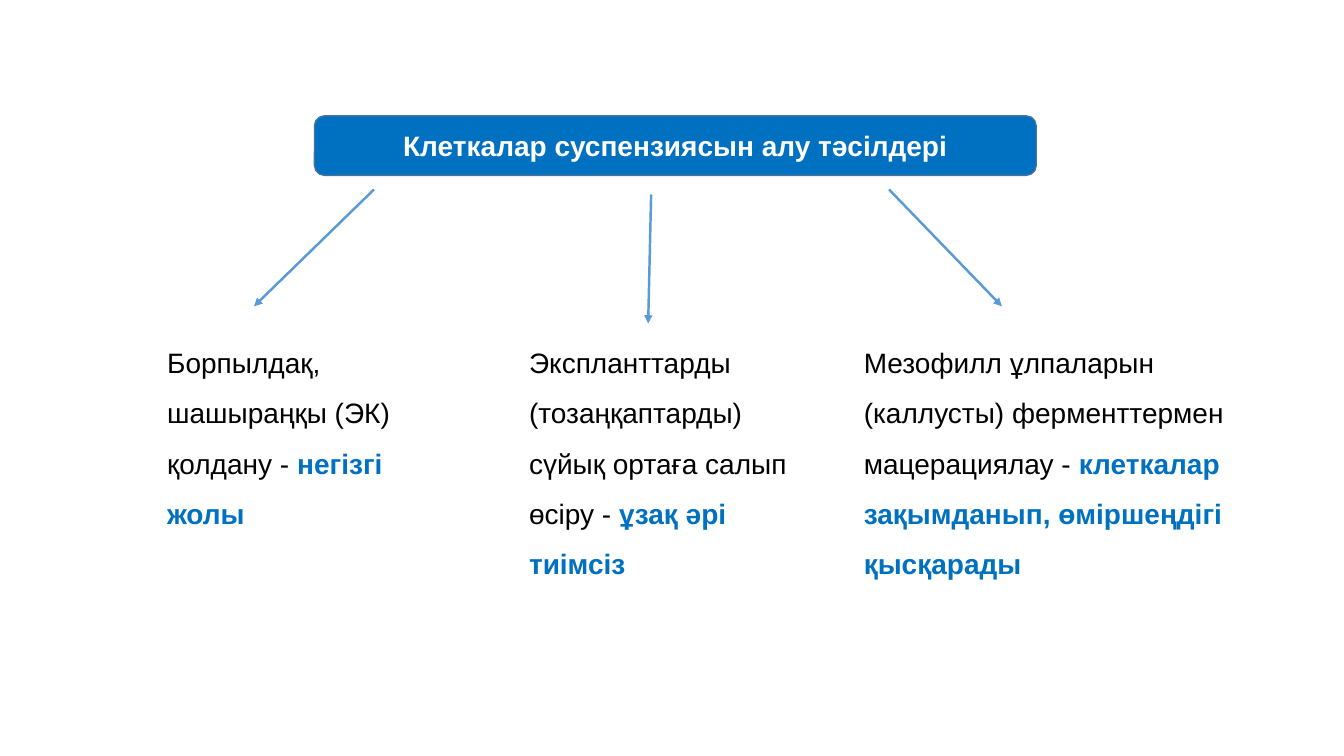
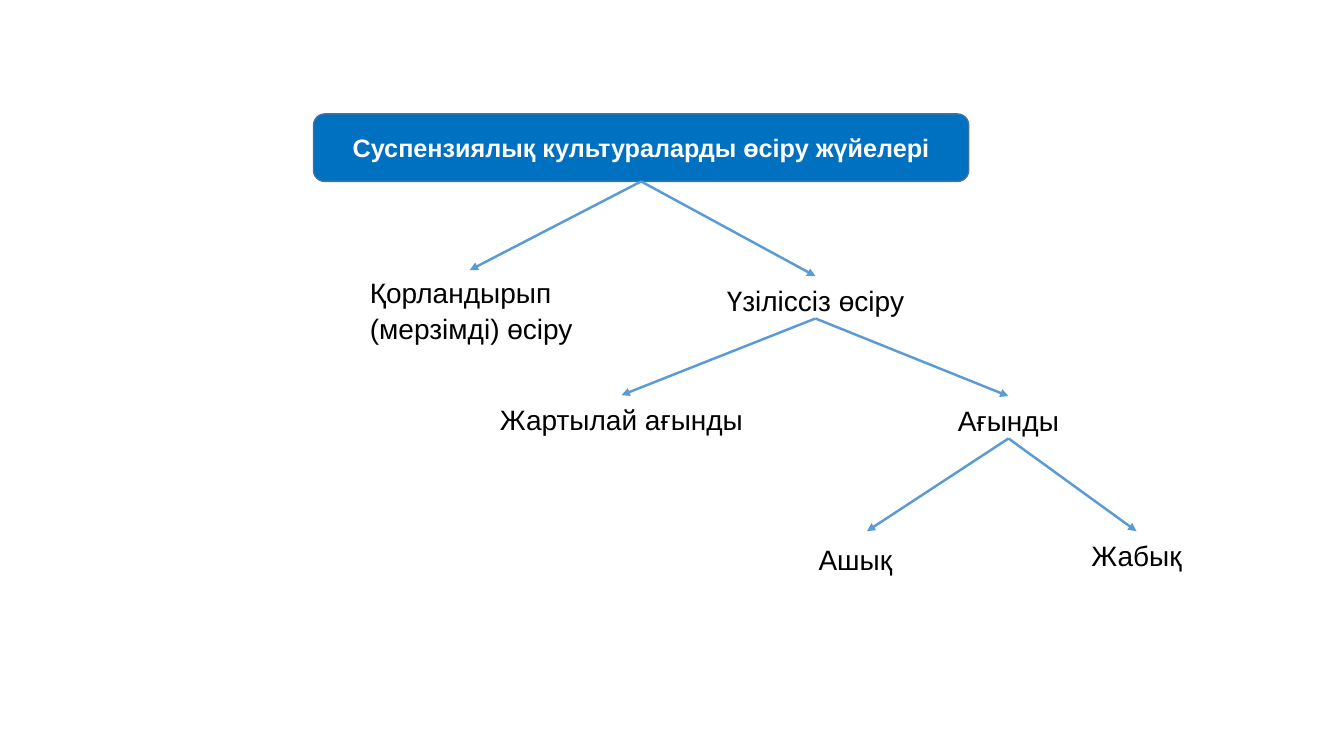
from dataclasses import dataclass
from typing import NamedTuple, Optional

from lxml.etree import SubElement
from pptx import Presentation
from pptx.dml.color import RGBColor
from pptx.enum.shapes import MSO_CONNECTOR, MSO_SHAPE
from pptx.enum.text import MSO_ANCHOR, PP_ALIGN
from pptx.oxml.ns import qn
from pptx.shapes.autoshape import Shape
from pptx.shapes.connector import Connector
from pptx.slide import Slide
from pptx.text.text import TextFrame
from pptx.util import Inches, Pt

WIDTH, HEIGHT = Inches(13.333), Inches(7.5)
FONT = "Arial"
BLUE, HEADER_EDGE, ARROW = "0070C0", "43739E", "5B9BD5"
BLACK, WHITE = "000000", "FFFFFF"
BOTTOM, TOP = 2, 0
NODE_HEIGHT = 5.6


class Point(NamedTuple):
    """A place in percent of the slide's width and height."""
    x: float
    y: float


class Area(NamedTuple):
    """A rectangle in percent of the slide's width and height."""
    left: float
    top: float
    width: float
    height: float


@dataclass(frozen=True)
class Method:
    """A way of obtaining a suspension, with its verdict."""
    area: Area
    description: str
    verdict: str


@dataclass(frozen=True)
class Node:
    """A label in the tree; a tip replaces the joint with its top side."""
    name: str
    parent: str
    area: Area
    lines: tuple[str, ...]
    align: PP_ALIGN = PP_ALIGN.CENTER
    tip: Optional[Point] = None


METHODS = (
    Method(Area(11.7, 42.8, 22.05, 34.13),
           "Борпылдақ, шашыраңқы (ЭК) қолдану - ", "негізгі жолы"),
    Method(Area(38.63, 42.8, 23.25, 34.13),
           "Экспланттарды (тозаңқаптарды) сүйық ортаға салып өсіру - ",
           "ұзақ әрі тиімсіз"),
    Method(Area(63.53, 42.8, 32.4, 39.47),
           "Мезофилл ұлпаларын (каллусты) ферменттермен мацерациялау - ",
           "клеткалар зақымданып, өміршеңдігі қысқарады"),
)
METHOD_ARROWS = (
    (Point(27.83, 25.07), Point(18.9, 40.53)),
    (Point(66.15, 25.07), Point(74.55, 40.53)),
    (Point(48.45, 25.73), Point(48.23, 42.8)),
)
NODES = (
    Node("batch", "header", Area(26.78, 35.47, 17.1, 10.93),
         ("Қорландырып", "(мерзімді) өсіру"), PP_ALIGN.LEFT, Point(34.95, 35.73)),
    Node("continuous", "header", Area(53.25, 36.53, 14.85, NODE_HEIGHT),
         ("Үзіліссіз өсіру",)),
    Node("semi-flow", "continuous", Area(36.38, 52.27, 19.73, NODE_HEIGHT),
         ("Жартылай ағынды",)),
    Node("flow", "continuous", Area(70.5, 52.4, 9.08, NODE_HEIGHT), ("Ағынды",)),
    Node("open", "flow", Area(59.85, 70.8, 7.58, NODE_HEIGHT), ("Ашық",),
         tip=Point(64.5, 70.27)),
    Node("closed", "flow", Area(80.4, 70.27, 8.33, NODE_HEIGHT), ("Жабық",)),
)


def color(code: str) -> RGBColor:
    """Turn a hex string into a colour."""
    return RGBColor.from_string(code)


def across(share: float) -> int:
    """Turn a percentage of the width into a length."""
    return round(WIDTH * share / 100)


def down(share: float) -> int:
    """Turn a percentage of the height into a length."""
    return round(HEIGHT * share / 100)


def place(area: Area) -> tuple[int, int, int, int]:
    """Turn an area into left, top, width and height."""
    return across(area.left), down(area.top), across(area.width), down(area.height)


def write(frame: TextFrame, lines: tuple[tuple[tuple[str, str, bool], ...], ...], *,
          size: float = 20, align: PP_ALIGN = PP_ALIGN.LEFT,
          spacing: float = 1.0, anchor: MSO_ANCHOR = MSO_ANCHOR.TOP,
          wrap: bool = True) -> None:
    """Fill a frame with lines of (text, colour, bold) spans."""
    frame.word_wrap = wrap
    frame.vertical_anchor = anchor
    for index, line in enumerate(lines):
        para = frame.add_paragraph() if index else frame.paragraphs[0]
        para.alignment = align
        para.line_spacing = spacing
        for text, code, bold in line:
            span = para.add_run()
            span.text = text
            span.font.name = FONT
            span.font.size = Pt(size)
            span.font.bold = bold
            span.font.color.rgb = color(code)


def add_box(page: Slide, kind: MSO_SHAPE, area: Area, *, edge: str,
            fill: Optional[str] = None) -> Shape:
    """Add an outlined box without a shadow."""
    box = page.shapes.add_shape(kind, *place(area))
    box.shadow.inherit = False
    box.line.color.rgb = color(edge)
    box.line.width = Pt(1)
    if fill:
        box.fill.solid()
        box.fill.fore_color.rgb = color(fill)
    else:
        box.fill.background()
    return box


def add_header(page: Slide, area: Area, text: str, *, size: float) -> Shape:
    """Add the rounded blue heading."""
    box = add_box(page, MSO_SHAPE.ROUNDED_RECTANGLE, area, edge=HEADER_EDGE, fill=BLUE)
    write(box.text_frame, (((text, WHITE, True),),), size=size,
          align=PP_ALIGN.CENTER, anchor=MSO_ANCHOR.MIDDLE)
    return box


def add_arrow(page: Slide, start: Point, end: Point) -> Connector:
    """Add a straight arrow pointing at its end."""
    arrow = page.shapes.add_connector(
        MSO_CONNECTOR.STRAIGHT,
        across(start.x), down(start.y), across(end.x), down(end.y))
    arrow.line.color.rgb = color(ARROW)
    arrow.line.width = Pt(1.75)
    SubElement(arrow.line._get_or_add_ln(), qn("a:tailEnd"), type="triangle")
    SubElement(arrow._element.spPr, qn("a:effectLst"))
    return arrow


def build_methods(page: Slide) -> None:
    """Draw the three ways of obtaining a cell suspension."""
    add_header(page, Area(23.4, 15.33, 53.7, 7.87),
               "Клеткалар суспензиясын алу тәсілдері", size=20)
    for method in METHODS:
        box = page.shapes.add_textbox(*place(method.area))
        write(box.text_frame, (((method.description, BLACK, False),
                                (method.verdict, BLUE, True)),), spacing=1.5)
    for start, end in METHOD_ARROWS:
        add_arrow(page, start, end)


def build_systems(page: Slide) -> None:
    """Draw the tree of culture systems."""
    boxes = {"header": add_header(page, Area(23.33, 15.07, 48.75, 8.93),
                                  "Суспензиялық культураларды өсіру жүйелері", size=18)}
    for node in NODES:
        box = add_box(page, MSO_SHAPE.RECTANGLE, node.area, edge=WHITE)
        write(box.text_frame, tuple(((line, BLACK, False),) for line in node.lines),
              align=node.align, spacing=1.07, wrap=node.align == PP_ALIGN.LEFT)
        boxes[node.name] = box
    for node in NODES:
        end = node.tip or Point(node.area.left + node.area.width / 2, node.area.top)
        arrow = add_arrow(page, end, end)
        arrow.begin_connect(boxes[node.parent], BOTTOM)
        if node.tip is None:
            arrow.end_connect(boxes[node.name], TOP)


def main() -> None:
    """Build and save the deck."""
    deck = Presentation()
    deck.slide_width, deck.slide_height = WIDTH, HEIGHT
    for build in (build_methods, build_systems):
        build(deck.slides.add_slide(deck.slide_layouts[6]))
    deck.save("out.pptx")


if __name__ == "__main__":
    main()
